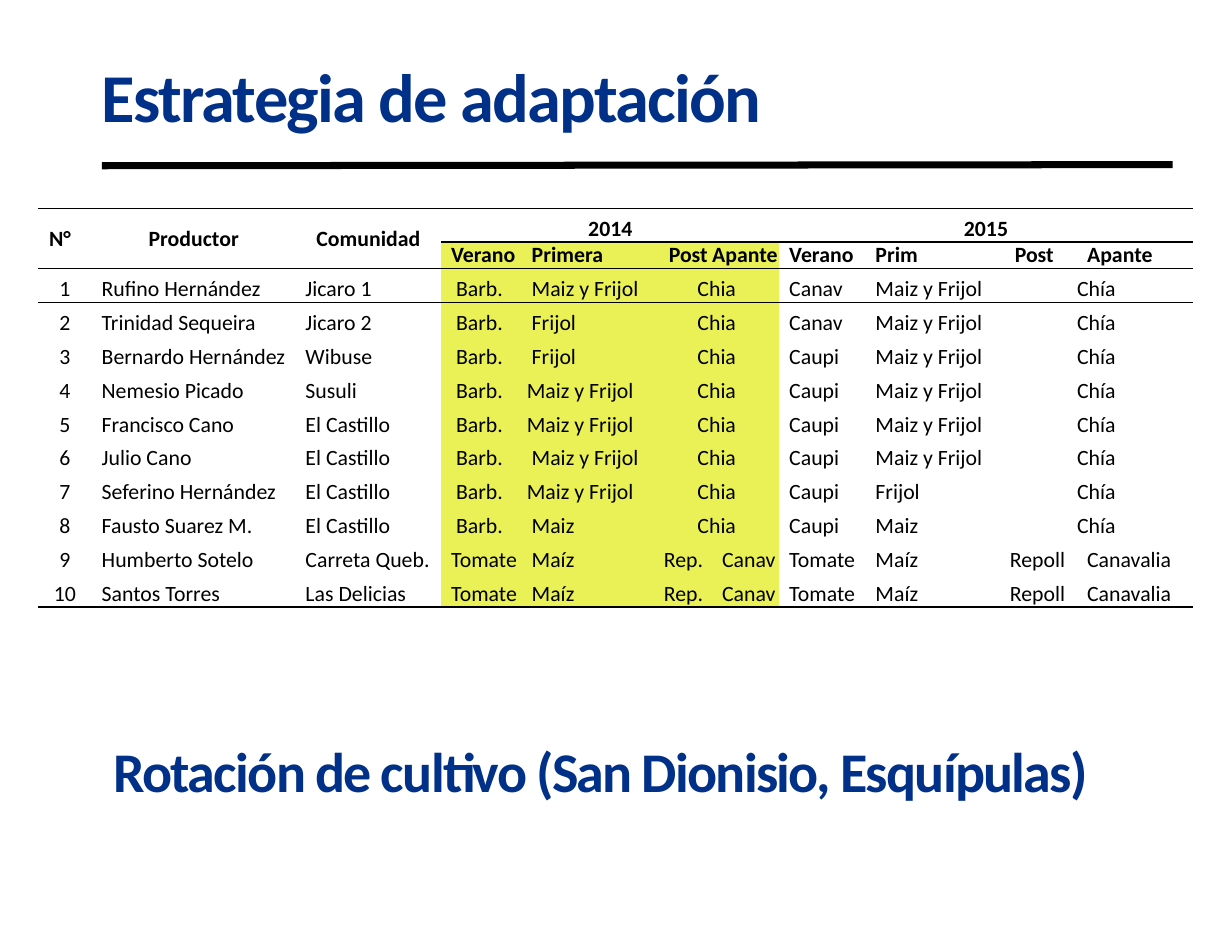
from lxml import etree
from pptx import Presentation
from pptx.dml.color import RGBColor
from pptx.enum.shapes import MSO_CONNECTOR
from pptx.enum.text import MSO_ANCHOR, MSO_AUTO_SIZE, PP_ALIGN
from pptx.oxml.ns import qn
from pptx.util import Inches, Pt

LEFT, CENTER = PP_ALIGN.LEFT, PP_ALIGN.CENTER
BOTTOM, MIDDLE = MSO_ANCHOR.BOTTOM, MSO_ANCHOR.MIDDLE
NO_AUTOFIT = MSO_AUTO_SIZE.NONE
STRAIGHT = MSO_CONNECTOR.STRAIGHT
TITLE_ONLY = 5
PLAIN_TABLE_STYLE = "{2D5ABB26-0587-4C30-8999-92F81FD0307C}"

COLORS = {"heading": "003087", "ink": "000000", "highlight": "EAF157"}
FONT = "Calibri"
GRID_COLUMNS, GRID_ROWS = 110, 85
SPACE = 0.44

COLUMN_WIDTHS = [4.8, 18.2, 13, 7.2, 11.8, 5.2, 6, 7.7, 12, 6.9, 10.3]
ROW_HEIGHTS = [3, 2.4] + [3.02] * 10
HIGHLIGHT_COLUMNS = range(3, 7)
PRIMERA = 4
SEASONS = ["Verano", "Primera", "Post", "Apante", "Verano", "Prim", "Post", "Apante"]
SEASON_INDENTS = [2, 2, 3, 0, 2, 2, 3, 2]
MAIZ_FRIJOL = "Maiz y Frijol"
CHIA = ["Chia", None]
CHIA_ACCENT = ["Chía", None]
TOMATE = ["Tomate", "Maíz", "Rep.", "Canav", "Tomate", "Maíz", "Repoll", "Canavalia"]


def rotation(first_2014, summer_2015, first_2015=MAIZ_FRIJOL):
    return ["Barb.", first_2014, *CHIA, summer_2015, first_2015, *CHIA_ACCENT]


PRODUCERS = [
    ("Rufino Hernández", "Jicaro 1", rotation(MAIZ_FRIJOL, "Canav")),
    ("Trinidad Sequeira", "Jicaro 2", rotation("Frijol", "Canav")),
    ("Bernardo Hernández", "Wibuse", rotation("Frijol", "Caupi")),
    ("Nemesio Picado", "Susuli", rotation(MAIZ_FRIJOL, "Caupi")),
    ("Francisco Cano", "El Castillo", rotation(MAIZ_FRIJOL, "Caupi")),
    ("Julio Cano", "El Castillo", rotation(MAIZ_FRIJOL, "Caupi")),
    ("Seferino Hernández", "El Castillo", rotation(MAIZ_FRIJOL, "Caupi", "Frijol")),
    ("Fausto Suarez M.", "El Castillo", rotation("Maiz", "Caupi", "Maiz")),
    ("Humberto Sotelo", "Carreta Queb.", TOMATE),
    ("Santos Torres", "Las Delicias", TOMATE),
]
NARROW_INDENT_PRODUCERS = {4, 5, 7}


def write_text(text_frame, text, size=14, color="ink", bold=False, align=LEFT, spacing=None):
    paragraph = text_frame.paragraphs[0]
    paragraph.alignment = align
    run = paragraph.add_run()
    run.text = text
    run.font.name = FONT
    run.font.size = Pt(size)
    run.font.bold = bold
    run.font.color.rgb = RGBColor.from_string(COLORS[color])
    if spacing is not None:
        run.font._element.set("spc", str(round(spacing * 100)))


class SlideBuilder:
    def __init__(self, presentation):
        self.column = presentation.slide_width / GRID_COLUMNS
        self.row = presentation.slide_height / GRID_ROWS
        self.slide = presentation.slides.add_slide(presentation.slide_layouts[TITLE_ONLY])

    def x(self, columns):
        return round(columns * self.column)

    def y(self, rows):
        return round(rows * self.row)

    def place(self, left, top, width, height):
        return self.x(left), self.y(top), self.x(width), self.y(height)

    def format_heading(self, shape, text, size, align):
        frame = shape.text_frame
        frame.word_wrap = True
        frame.auto_size = NO_AUTOFIT
        frame.vertical_anchor = BOTTOM
        frame.margin_left = frame.margin_top = frame.margin_bottom = 0
        frame.margin_right = self.x(1.1)
        write_text(frame, text, size, "heading", True, align, spacing=-1.1)

    def title(self, text, box, size, align):
        shape = self.slide.shapes.title
        shape.left, shape.top, shape.width, shape.height = self.place(*box)
        self.format_heading(shape, text, size, align)

    def heading(self, text, box, size, align):
        shape = self.slide.shapes.add_textbox(*self.place(*box))
        self.format_heading(shape, text, size, align)

    def line(self, start, end, width):
        connector = self.slide.shapes.add_connector(
            STRAIGHT, self.x(start[0]), self.y(start[1]), self.x(end[0]), self.y(end[1]))
        connector.line.color.rgb = RGBColor.from_string(COLORS["ink"])
        connector.line.width = Pt(width)
        etree.SubElement(connector._element.spPr, qn("a:effectLst"))

    def table(self, left, top, widths, heights):
        box = self.place(left, top, sum(widths), sum(heights))
        table = self.slide.shapes.add_table(len(heights), len(widths), *box).table
        table.first_row = table.horz_banding = False
        table._tbl.tblPr.find(qn("a:tableStyleId")).text = PLAIN_TABLE_STYLE
        for column, width in zip(table.columns, widths):
            column.width = self.x(width)
        for row, height in zip(table.rows, heights):
            row.height = self.y(height)
        return table

    def cell(self, cell, text=None, spaces=0, highlight=False, borders=(), anchor=BOTTOM, **style):
        cell.margin_top = cell.margin_bottom = cell.margin_right = 0
        cell.margin_left = self.x(spaces * SPACE)
        cell.vertical_anchor = anchor
        for side in borders:
            border = etree.SubElement(cell._tc.get_or_add_tcPr(), qn(f"a:{side}"), w=str(Pt(1)))
            fill = etree.SubElement(border, qn("a:solidFill"))
            etree.SubElement(fill, qn("a:srgbClr"), val=COLORS["ink"])
        if highlight:
            cell.fill.solid()
            cell.fill.fore_color.rgb = RGBColor.from_string(COLORS["highlight"])
        else:
            cell.fill.background()
        if text:
            write_text(cell.text_frame, text, **style)


def fill_header(builder, table):
    edges = ("lnT", "lnB")
    for column, label in enumerate(["N°", "Productor", "Comunidad"]):
        table.cell(0, column).merge(table.cell(1, column))
        builder.cell(table.cell(0, column), label, borders=edges, anchor=MIDDLE, bold=True, align=CENTER)
        builder.cell(table.cell(1, column), borders=("lnB",))
    table.cell(0, 0).margin_right = builder.x(2 * SPACE)
    for first, year in ((3, "2014"), (7, "2015")):
        table.cell(0, first).merge(table.cell(0, first + 3))
        for column in range(first, first + 4):
            label = year if column == first else None
            builder.cell(table.cell(0, column), label, borders=edges, bold=True, align=CENTER)
    for column, (season, spaces) in enumerate(zip(SEASONS, SEASON_INDENTS), 3):
        builder.cell(table.cell(1, column), season, spaces, column in HIGHLIGHT_COLUMNS, edges, bold=True)


def fill_producers(builder, table):
    for number, (producer, community, crops) in enumerate(PRODUCERS, 1):
        row = number + 1
        borders = {1: ("lnT",), len(PRODUCERS): ("lnB",)}.get(number, ())
        values = [str(number), producer, community, *crops]
        for column, value in enumerate(values):
            spans = column + 1 < len(values) and values[column + 1] is None
            if spans:
                table.cell(row, column).merge(table.cell(row, column + 1))
            centered = column == 0 or spans
            spaces = 0 if centered else 3 if value == "Barb." else 2
            if column == PRIMERA and number in NARROW_INDENT_PRODUCERS:
                spaces = 1
            builder.cell(table.cell(row, column), value, spaces, column in HIGHLIGHT_COLUMNS,
                         borders, align=CENTER if centered else LEFT)


def main():
    presentation = Presentation()
    presentation.slide_width, presentation.slide_height = Inches(11), Inches(8.5)
    builder = SlideBuilder(presentation)
    builder.title("Rotación de cultivo (San Dionisio, Esquípulas)", (6.6, 59.5, 95.2, 12.3), 36, CENTER)
    table = builder.table(3.4, 18.6, COLUMN_WIDTHS, ROW_HEIGHTS)
    fill_header(builder, table)
    fill_producers(builder, table)
    builder.heading("Estrategia de adaptación", (9.1, -0.1, 90.3, 12.3), 44, LEFT)
    builder.line((9.1, 14.8), (104.7, 14.7), 4.5)
    presentation.save("out.pptx")


if __name__ == "__main__":
    main()
